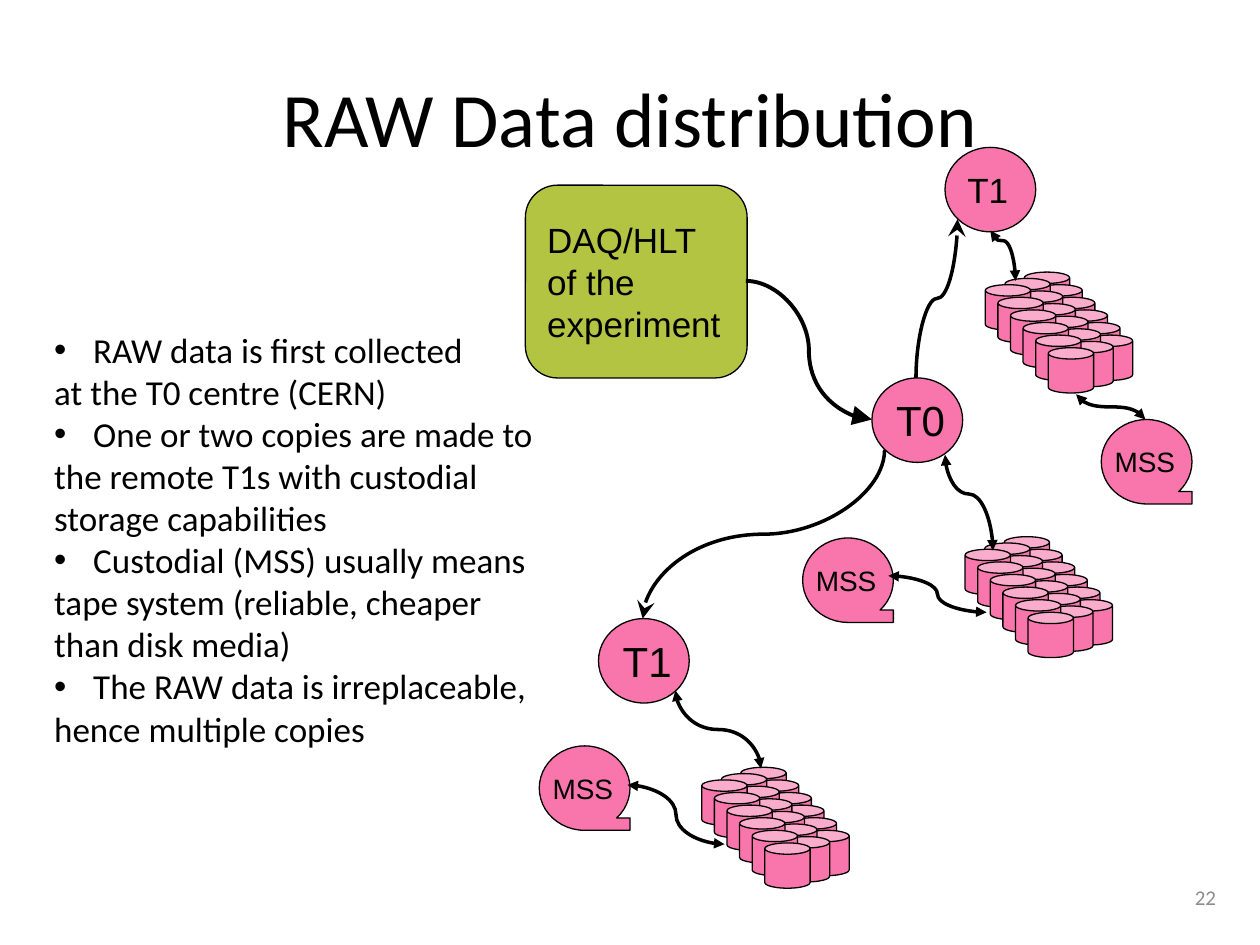
from lxml import etree
from pptx import Presentation
from pptx.dml.color import RGBColor
from pptx.enum.shapes import MSO_CONNECTOR, MSO_SHAPE
from pptx.enum.text import MSO_ANCHOR, MSO_AUTO_SIZE, PP_ALIGN
from pptx.oxml.ns import qn
from pptx.util import Inches, Pt

COLORS = {"pink": "F876AB", "green": "B3C442", "ink": "000000", "grey": "8C8C8C"}

TITLE = "RAW Data distribution"
PAGE = "22"
# Each point: its bulleted first line, then the lines that follow it
POINTS = [
    ["RAW data is first collected", "at the T0 centre (CERN)"],
    ["One or two copies are made to", "the remote T1s with custodial",
     "storage capabilities"],
    ["Custodial (MSS) usually means", "tape system (reliable, cheaper",
     "than disk media)"],
    ["The RAW data is irreplaceable,", "hence multiple copies"],
]
EXPERIMENT = ["DAQ/HLT", "of the", "experiment"]
# text, size, left, top
SITES = [(" T1", 20, 7.5, 1.17), (" T0", 24, 6.92, 3), (" T1", 24, 4.75, 4.91)]
TAPES = [("MSS", 16, 6.37, 4.27), ("MSS", 16, 4.28, 5.92), ("MSS", 16, 8.74, 3.33)]
NODE_SIZE = (0.72, 0.67)
# left and top of the rearmost disk of each farm
DISK_FARMS = [(8.13, 2.16), (7.97, 4.26), (5.88, 6.09)]
DISK = 0.36
ROWS, COLUMNS = 6, 3
ROW_STEP, COLUMN_STEP = (0.1, 0.1), (-0.155, 0.05)

BOTH = ("triangle", "triangle", "med")
# start, end, leaves vertically, (head, tail, arrow size), width, bend
LINKS = [
    ((5.92, 2.23), (6.92, 3.33), False, (None, "triangle", "lg"), 2.25, 0.5),
    ((7.27, 3), (7.6, 1.74), True, (None, "stealth", "lg"), 2, 0.5),
    ((5.1, 4.91), (7.02, 3.57), True, ("stealth", None, "lg"), 2, 0.5),
    ((7.86, 1.83), (8.06, 2.23), True, BOTH, 2, 0.2),
    ((7.5, 3.61), (7.88, 4.37), True, BOTH, 2, 0.41),
    ((5.36, 5.48), (6.04, 6.1), True, BOTH, 2, 0.5),
    ((9.09, 3.33), (8.54, 3.13), True, BOTH, 2, 0.5),
    ((7.83, 4.86), (7.05, 4.57), False, BOTH, 2, 0.5),
    ((5.75, 6.7), (4.98, 6.23), False, BOTH, 2, 0.5),
]
# (leaves vertically, goes right, goes down): rotation, flips
TURNS = {
    (False, True, True): (0, ()),
    (False, False, False): (180, ()),
    (True, True, False): (90, ("flipH", "flipV")),
    (True, True, True): (270, ("flipH",)),
    (True, False, False): (270, ("flipV",)),
}


def rgb(name):
    return RGBColor.from_string(COLORS[name])


def write(tf, lines, size, font="Arial", color="ink", align=PP_ALIGN.LEFT):
    for i, line in enumerate(lines):
        p = tf.paragraphs[0] if i == 0 else tf.add_paragraph()
        p.alignment = align
        r = p.add_run()
        r.text = line
        for name, value in {"size": Pt(size), "name": font}.items():
            setattr(r.font, name, value)
        r.font.color.rgb = rgb(color)


def place(sp, *box):
    for name, value in zip(("left", "top", "width", "height"), box):
        setattr(sp, name, Inches(value))


def add_shape(shapes, kind, box, fill="pink"):
    sp = shapes.add_shape(kind, *map(Inches, box))
    sp.shadow.inherit = False
    sp.fill.solid()
    sp.fill.fore_color.rgb = rgb(fill)
    sp.line.color.rgb = rgb("ink")
    sp.line.width = Pt(0.75)
    return sp


def add_label(sp, lines, size, margin=None):
    tf = sp.text_frame
    tf.word_wrap = False
    tf.vertical_anchor = MSO_ANCHOR.MIDDLE
    if margin is not None:
        for side in ("left", "top", "right", "bottom"):
            setattr(tf, f"margin_{side}", Inches(margin))
    write(tf, lines, size)


def add_link(shapes, start, end, vertical, arrows, width, bend):
    """Curved connector; one that leaves vertically is a turned horizontal one."""
    (x1, y1), (x2, y2) = start, end
    w, h = abs(x2 - x1), abs(y2 - y1)
    if vertical:
        w, h = h, w
    left, top = (x1 + x2 - w) / 2, (y1 + y2 - h) / 2
    cx = shapes.add_connector(MSO_CONNECTOR.CURVE,
                              *map(Inches, (left, top, left + w, top + h)))
    rotation, flips = TURNS[vertical, x2 > x1, y2 > y1]
    props = cx._element.spPr
    xfrm = props.find(qn("a:xfrm"))
    xfrm.set("rot", str(rotation * 60000))
    for flip in flips:
        xfrm.set(flip, "1")
    geom = props.find(qn("a:prstGeom"))
    guides = geom.find(qn("a:avLst"))
    if guides is None:
        guides = etree.SubElement(geom, qn("a:avLst"))
    etree.SubElement(guides, qn("a:gd"), name="adj1",
                     fmla=f"val {round(bend * 100000)}")
    cx.line.color.rgb = rgb("ink")
    cx.line.width = Pt(width)
    head, tail, size = arrows
    ln = props.find(qn("a:ln"))
    for tag, arrow in (("a:headEnd", head), ("a:tailEnd", tail)):
        if arrow:
            etree.SubElement(ln, qn(tag), type=arrow, w=size, len=size)
    etree.SubElement(props, qn("a:effectLst"))


def add_disk_farm(shapes, left, top):
    group = shapes.add_group_shape()
    for column in range(COLUMNS):
        for row in range(ROWS):
            x = left + column * COLUMN_STEP[0] + row * ROW_STEP[0]
            y = top + column * COLUMN_STEP[1] + row * ROW_STEP[1]
            add_shape(group.shapes, MSO_SHAPE.CAN, (x, y, DISK, DISK))


def fill_points(body):
    place(body, 0.33, 2.56, 4.05, 3.47)
    tf = body.text_frame
    tf.word_wrap = False
    tf.auto_size = MSO_AUTO_SIZE.NONE
    tf.vertical_anchor = MSO_ANCHOR.TOP
    write(tf, [line for point in POINTS for line in point], 20, "Calibri")
    is_first = [i == 0 for point in POINTS for i in range(len(point))]
    for p, bulleted in zip(tf.paragraphs, is_first):
        p.space_before = Pt(0)
        indent = Inches(0.31) if bulleted else 0
        pPr = p._p.get_or_add_pPr()
        pPr.set("marL", str(indent))
        pPr.set("indent", str(-indent))
        if bulleted:
            etree.SubElement(pPr, qn("a:buFont"), typeface="Arial")
            etree.SubElement(pPr, qn("a:buChar"), char="•")
        else:
            etree.SubElement(pPr, qn("a:buNone"))


def main():
    prs = Presentation()
    prs.slide_width, prs.slide_height = Inches(10), Inches(7.5)
    s = prs.slides.add_slide(prs.slide_layouts[1])
    shapes = s.shapes

    place(shapes.title, 0.5, 0.3, 9, 1.25)
    write(shapes.title.text_frame, [TITLE], 44, "Calibri", align=PP_ALIGN.CENTER)
    fill_points(s.placeholders[1])

    page = shapes.add_textbox(*map(Inches, (7.42, 6.92, 2.33, 0.4)))
    page.text_frame.word_wrap = True
    page.text_frame.vertical_anchor = MSO_ANCHOR.MIDDLE
    write(page.text_frame, [PAGE], 12, "Calibri", "grey", PP_ALIGN.RIGHT)

    source = add_shape(shapes, MSO_SHAPE.ROUNDED_RECTANGLE,
                       (4.17, 1.47, 1.76, 1.53), "green")
    add_label(source, EXPERIMENT, 20)
    for kind, nodes in ((MSO_SHAPE.OVAL, SITES),
                        (MSO_SHAPE.FLOWCHART_SEQUENTIAL_ACCESS_STORAGE, TAPES)):
        for text, size, left, top in nodes:
            node = add_shape(shapes, kind, (left, top, *NODE_SIZE))
            add_label(node, [text], size, margin=0)
    for farm in DISK_FARMS:
        add_disk_farm(shapes, *farm)
    for link in LINKS:
        add_link(shapes, *link)

    prs.save("out.pptx")


if __name__ == "__main__":
    main()
